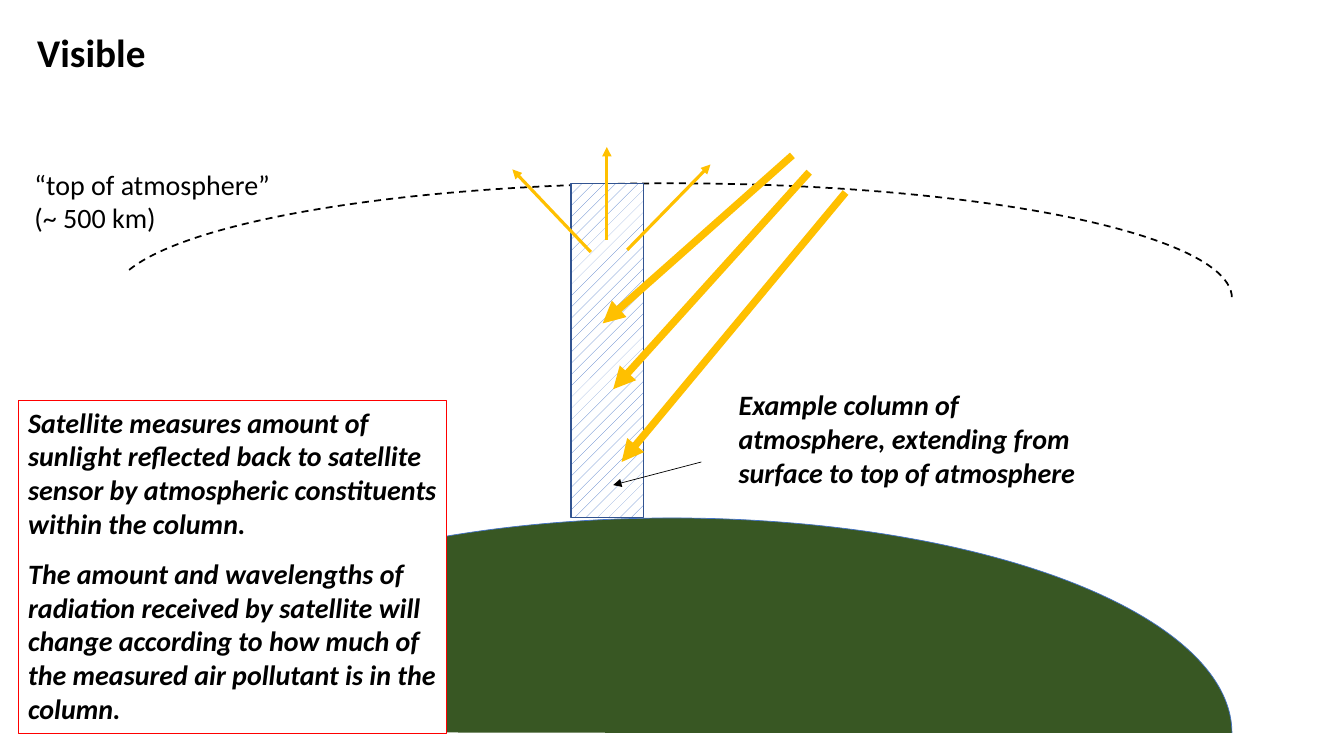
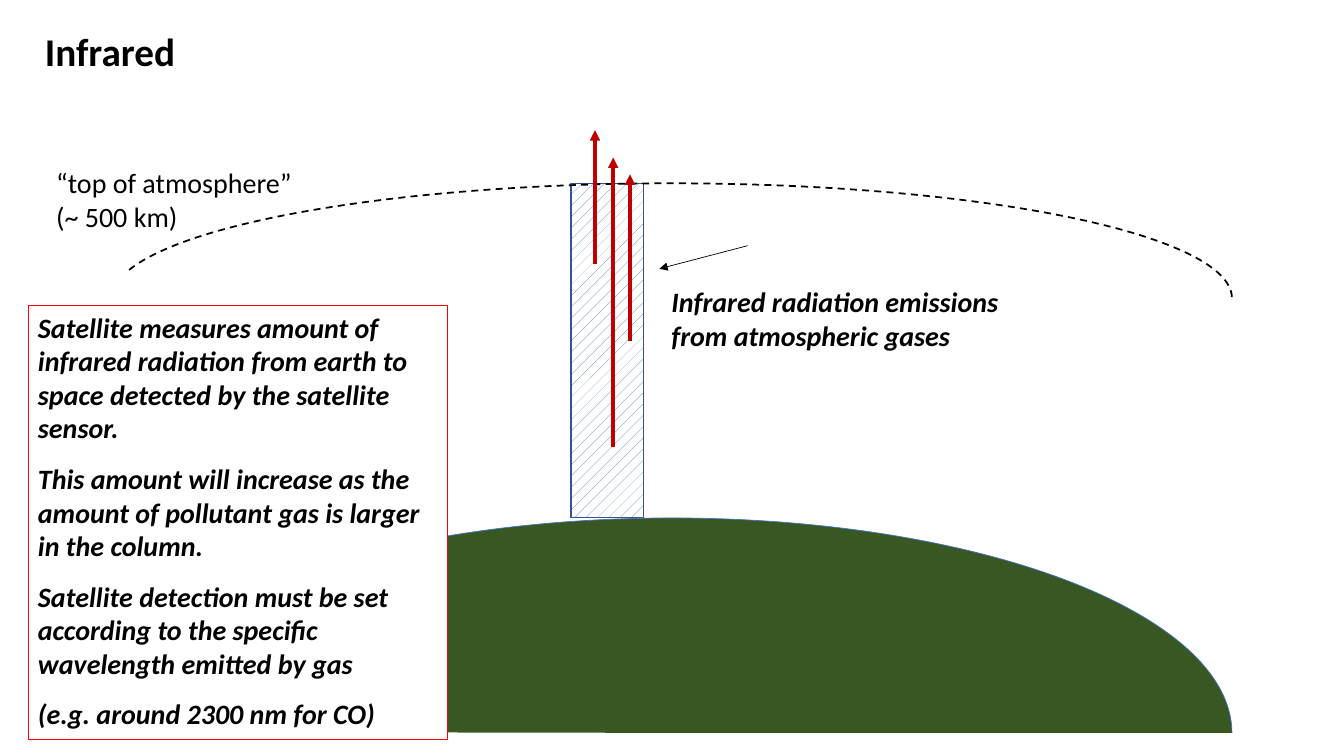
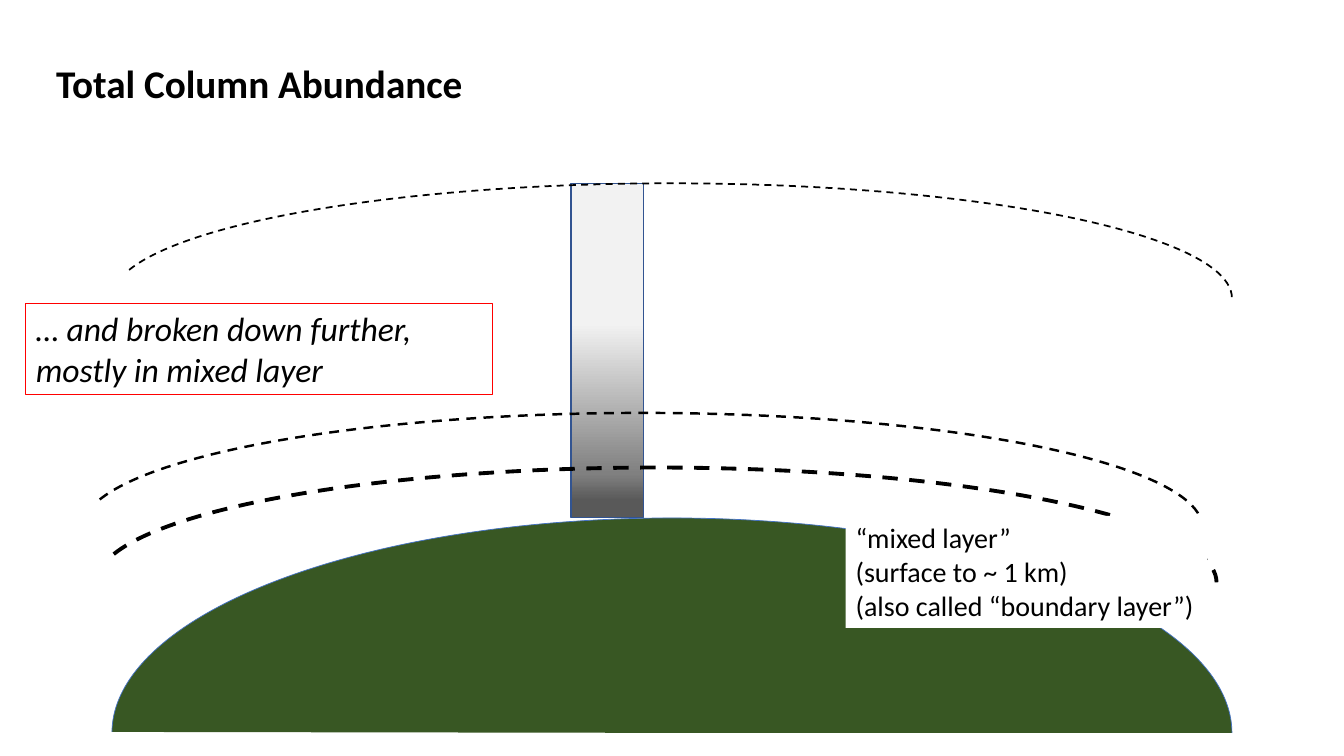
"""Build three slides on how satellites observe a column of the atmosphere."""
from copy import deepcopy

from pptx import Presentation
from pptx.dml.color import RGBColor
from pptx.enum.dml import MSO_LINE, MSO_PATTERN
from pptx.enum.shapes import MSO_CONNECTOR, MSO_SHAPE
from pptx.enum.text import MSO_AUTO_SIZE
from pptx.oxml.ns import qn
from pptx.oxml.xmlchemy import OxmlElement
from pptx.util import Pt

BLACK = RGBColor(0x00, 0x00, 0x00)
WHITE = RGBColor(0xFF, 0xFF, 0xFF)
EARTH_GREEN = RGBColor(0x38, 0x57, 0x23)
BLUE = RGBColor(0x44, 0x72, 0xC4)
COLUMN_EDGE = RGBColor(0x32, 0x54, 0x91)
SUNLIGHT = RGBColor(0xFF, 0xC0, 0x00)
INFRARED = RGBColor(0xC0, 0x00, 0x00)
RED = RGBColor(0xFF, 0x00, 0x00)
SMOG_STOPS = [
    (0.05, RGBColor(0x59, 0x59, 0x59)),
    (0.13, RGBColor(0x80, 0x80, 0x80)),
    (0.58, RGBColor(0xF2, 0xF2, 0xF2)),
]

FONT = "Calibri"
ARC_WIDTH = 800
LAYER_HEIGHT = 164

TITLE = dict(size=28, bold=True)
PLAIN = dict(size=20)
LABEL = dict(size=20, bold=True, italic=True, space=12, wrap=True, fill=WHITE)
BOXED = dict(LABEL, outline=RED)
REMARK = dict(size=24, italic=True, wrap=True, outline=RED)

TOP_OF_ATMOSPHERE = ["“top of atmosphere”", "(~ 500 km)"]
TOP_LAYER = (80, 131, 1.25)

SLIDES = [
    dict(
        layers_behind=[TOP_LAYER],
        layers_in_front=[],
        hatched=True,
        arrows=[
            (SUNLIGHT, 5.25, [(566, 111, 430.5, 231), (578, 123, 438, 278), (604, 137.5, 444, 330)]),
            (SUNLIGHT, 2.25, [(433.5, 171.5, 433.5, 105), (422, 180, 366, 121), (448, 178.5, 507.5, 117.5)]),
            (BLACK, 0.5, [(501, 330, 438, 346.5)]),
        ],
        texts=[
            ((19.5, 16.5, 93, 41), ["Visible"], TITLE),
            ((17.5, 116, 184, 55.5), TOP_OF_ATMOSPHERE, PLAIN),
            ((13, 286, 306, 238), [
                "Satellite measures amount of sunlight reflected back to satellite sensor "
                "by atmospheric constituents within the column.",
                "The amount and wavelengths of radiation received by satellite will change "
                "according to how much of the measured air pollutant is in the column.",
            ], BOXED),
            ((520.5, 273.5, 265, 80), [
                "Example column of atmosphere, extending from surface to top of atmosphere",
            ], LABEL),
        ],
    ),
    dict(
        layers_behind=[],
        layers_in_front=[TOP_LAYER],
        hatched=True,
        arrows=[
            (INFRARED, 2.5, [(438, 319.5, 438, 112.5), (450, 243.5, 450, 124.5), (425, 188.5, 425, 93)]),
            (BLACK, 0.5, [(534, 175.5, 471, 192)]),
        ],
        texts=[
            ((25, 16, 109, 41), ["Infrared"], TITLE),
            ((33, 115, 184, 55.5), TOP_OF_ATMOSPHERE, PLAIN),
            ((20, 218, 300, 310), [
                "Satellite measures amount of infrared radiation from earth to space "
                "detected by the satellite sensor.",
                "This amount will increase as the amount of pollutant gas is larger in the column.",
                "Satellite detection must be set according to the specific wavelength emitted by gas",
                "(e.g. around 2300 nm for CO)",
            ], BOXED),
            ((472.5, 200, 265, 55.5), ["Infrared radiation emissions from atmospheric gases"], LABEL),
        ],
    ),
    dict(
        layers_behind=[],
        layers_in_front=[TOP_LAYER, (59, 295, 1.75), (69, 334, 2.75)],
        hatched=False,
        arrows=[],
        texts=[
            ((33, 39, 308, 41), ["Total Column Abundance"], TITLE),
            ((604, 368.5, 258.5, 80), [
                "“mixed layer”",
                "(surface to ~ 1 km)",
                "(also called “boundary layer”)",
            ], dict(PLAIN, fill=WHITE)),
            ((18.5, 216.5, 333.5, 65.5), ["… and broken down further, mostly in mixed layer"], REMARK),
        ],
    ),
]


def add_figure(slide, kind, box, color, width, start=None):
    shape = slide.shapes.add_shape(kind, *map(Pt, box))
    shape.shadow.inherit = False
    shape.line.color.rgb = color
    shape.line.width = Pt(width)
    if start is not None:
        shape.adjustments[0] = start
        shape.adjustments[1] = 0
    return shape


def add_layers(slide, layers):
    for left, top, width in layers:
        box = (left, top, ARC_WIDTH, LAYER_HEIGHT)
        layer = add_figure(slide, MSO_SHAPE.ARC, box, BLACK, width, 109.786)
        layer.fill.background()
        layer.line.dash_style = MSO_LINE.DASH


presentation = Presentation()
presentation.slide_width = Pt(960)
presentation.slide_height = Pt(540)

for content in SLIDES:
    slide = presentation.slides.add_slide(presentation.slide_layouts[6])

    earth = add_figure(slide, MSO_SHAPE.ARC, (80, 370, ARC_WIDTH, 307), BLUE, 0.5, 108.058)
    earth.fill.solid()
    earth.fill.fore_color.rgb = EARTH_GREEN

    add_layers(slide, content["layers_behind"])
    column = add_figure(slide, MSO_SHAPE.RECTANGLE, (408, 131, 51.5, 238.5), COLUMN_EDGE, 1)
    if content["hatched"]:
        column.fill.patterned()
        column.fill.pattern = MSO_PATTERN.PERCENT_10
        column.fill.fore_color.rgb = BLUE
        column.fill.back_color.rgb = WHITE
    else:
        column.fill.gradient()
        column.fill.gradient_angle = 90
        stop_list = next(column._element.iter(qn("a:gsLst")))
        stop_list.append(deepcopy(stop_list[-1]))
        for stop, (position, color) in zip(column.fill.gradient_stops, SMOG_STOPS):
            stop.position = position
            stop.color.rgb = color
    add_layers(slide, content["layers_in_front"])

    for color, width, routes in content["arrows"]:
        for route in routes:
            arrow = slide.shapes.add_connector(MSO_CONNECTOR.STRAIGHT, *map(Pt, route))
            arrow.line.color.rgb = color
            arrow.line.width = Pt(width)
            head = OxmlElement("a:tailEnd")
            head.set("type", "triangle")
            arrow.line._get_or_add_ln().append(head)
            arrow._element.spPr.append(OxmlElement("a:effectLst"))

    for box, lines, style in content["texts"]:
        shape = slide.shapes.add_textbox(*map(Pt, box))
        if "fill" in style:
            shape.fill.solid()
            shape.fill.fore_color.rgb = style["fill"]
        if "outline" in style:
            shape.line.color.rgb = style["outline"]
            shape.line.width = Pt(0.75)
        frame = shape.text_frame
        frame.word_wrap = style.get("wrap", False)
        frame.auto_size = MSO_AUTO_SIZE.SHAPE_TO_FIT_TEXT
        frame.text = "\n".join(lines)
        for paragraph in frame.paragraphs:
            paragraph.space_after = Pt(style.get("space", 0))
            paragraph.font.name = FONT
            paragraph.font.size = Pt(style["size"])
            paragraph.font.bold = style.get("bold", False)
            paragraph.font.italic = style.get("italic", False)
            paragraph.font.color.rgb = BLACK

presentation.save("out.pptx")
